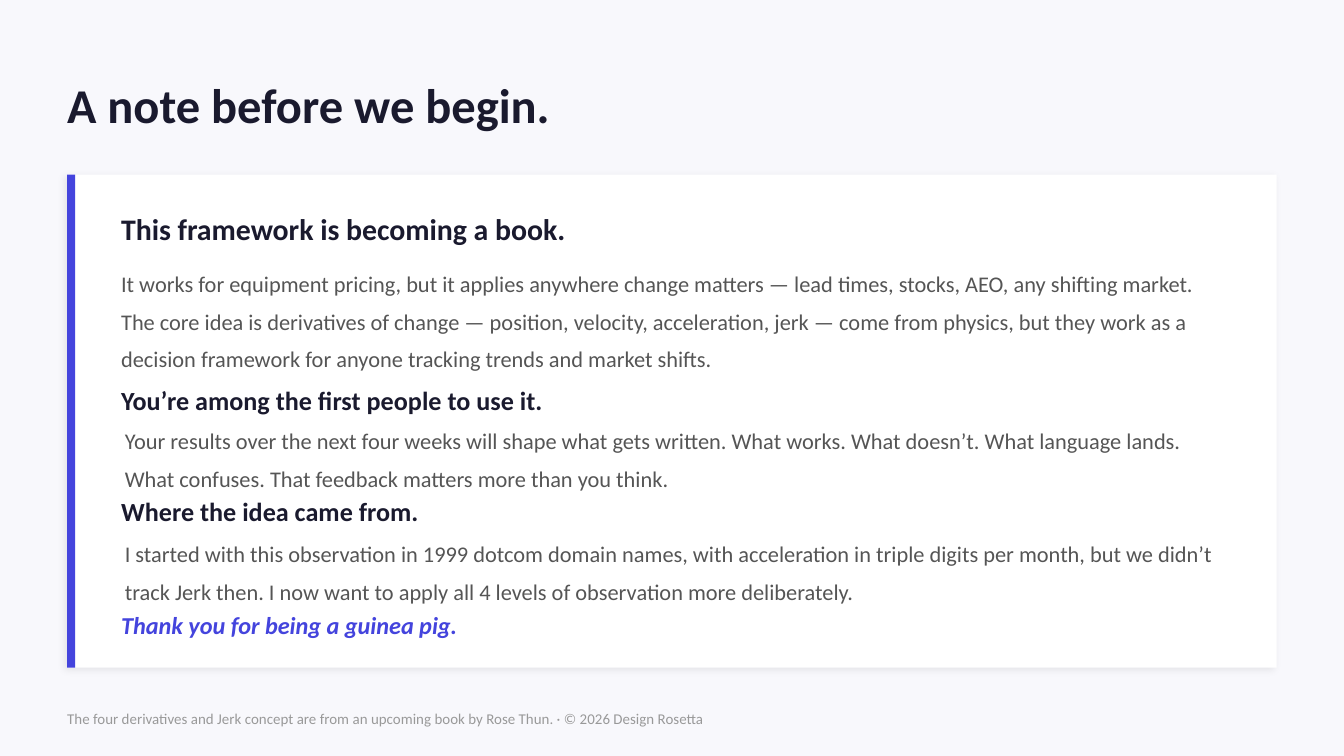
from lxml import etree
from pptx import Presentation
from pptx.dml.color import RGBColor
from pptx.enum.shapes import MSO_SHAPE
from pptx.enum.text import MSO_ANCHOR
from pptx.oxml.ns import qn
from pptx.util import Cm, Pt

RECTANGLE = MSO_SHAPE.RECTANGLE
MIDDLE = MSO_ANCHOR.MIDDLE

FONT = "Calibri"
PAPER, WHITE = "F8F8FC", "FFFFFF"
INK, GREY, PALE, ACCENT = "1A1A2E", "555555", "999999", "4444DD"

MARGIN, FULL_WIDTH = 1.27, 22.86
CARD_TOP, CARD_HEIGHT = 3.3, 9.32
TEXT_LEFT, TEXT_WIDTH = 2.29, 20.83
INDENTED_LEFT = 2.36

HEADINGS = [
    # top, height, size, text
    (3.81, 1.02, 16, "This framework is becoming a book."),
    (7.11, 0.89, 14, "You’re among the first people to use it."),
    (9.22, 0.89, 14, "Where the idea came from."),
]
PASSAGES = [
    # left, top, height, text
    (TEXT_LEFT, 5.08, 1.78,
     "It works for equipment pricing, but it applies anywhere change matters — "
     "lead times, stocks, AEO, any shifting market. The core idea is derivatives "
     "of change — position, velocity, acceleration, jerk — come from physics, but "
     "they work as a decision framework for anyone tracking trends and market shifts."),
    (INDENTED_LEFT, 7.87, 1.42,
     "Your results over the next four weeks will shape what gets written. "
     "What works. What doesn’t. What language lands. What confuses. "
     "That feedback matters more than you think."),
    (INDENTED_LEFT, 10.01, 1.42,
     "I started with this observation in 1999 dotcom domain names, with "
     "acceleration in triple digits per month, but we didn’t track Jerk then. "
     "I now want to apply all 4 levels of observation more deliberately."),
]


def color(hex_string):
    return RGBColor.from_string(hex_string)


def add_text(slide, text, left, top, width, height, *, size, fill=INK,
             bold=False, italic=False, line_spacing=None):
    box = slide.shapes.add_textbox(Cm(left), Cm(top), Cm(width), Cm(height))
    frame = box.text_frame
    frame.word_wrap = True
    frame.vertical_anchor = MIDDLE
    frame.margin_left = frame.margin_right = 0
    frame.margin_top = frame.margin_bottom = 0
    para = frame.paragraphs[0]
    if line_spacing:
        para.line_spacing = line_spacing
    span = para.add_run()
    span.text = text
    span.font.name = FONT
    span.font.size = Pt(size)
    span.font.bold = bold
    span.font.italic = italic
    span.font.color.rgb = color(fill)


def add_block(slide, left, top, width, height, fill):
    block = slide.shapes.add_shape(RECTANGLE, Cm(left), Cm(top), Cm(width), Cm(height))
    block.shadow.inherit = False
    block.fill.solid()
    block.fill.fore_color.rgb = color(fill)
    block.line.fill.background()
    return block


def add_soft_shadow(shape, blur, distance, angle, opacity):
    """Give the shape a black outer shadow; opacity is in percent."""
    effects = shape._element.spPr.find(qn("a:effectLst"))
    shadow = etree.SubElement(
        effects, qn("a:outerShdw"), blurRad=str(Pt(blur)), dist=str(Pt(distance)),
        dir=str(angle * 60000), algn="bl", rotWithShape="0")
    shade = etree.SubElement(shadow, qn("a:srgbClr"), val="000000")
    etree.SubElement(shade, qn("a:alpha"), val=str(opacity * 1000))


def add_card(slide):
    card = add_block(slide, MARGIN, CARD_TOP, FULL_WIDTH, CARD_HEIGHT, WHITE)
    add_soft_shadow(card, blur=4, distance=2, angle=135, opacity=8)
    add_block(slide, MARGIN, CARD_TOP, 0.15, CARD_HEIGHT, ACCENT)


def main():
    deck = Presentation()
    deck.slide_width, deck.slide_height = Cm(25.4), Cm(14.29)
    slide = deck.slides.add_slide(deck.slide_layouts[6])
    slide.background.fill.solid()
    slide.background.fill.fore_color.rgb = color(PAPER)

    add_text(slide, "A note before we begin.", MARGIN, 1.27, FULL_WIDTH, 1.4,
             size=26, bold=True)
    add_card(slide)
    for top, height, size, text in HEADINGS:
        add_text(slide, text, TEXT_LEFT, top, TEXT_WIDTH, height, size=size, bold=True)
    for left, top, height, text in PASSAGES:
        add_text(slide, text, left, top, TEXT_WIDTH, height,
                 size=12, fill=GREY, line_spacing=1.4)
    add_text(slide, "Thank you for being a guinea pig.", TEXT_LEFT, 11.43,
             TEXT_WIDTH, 0.76, size=13, fill=ACCENT, bold=True, italic=True)
    add_text(slide, "The four derivatives and Jerk concept are from an upcoming book "
             "by Rose Thun. · © 2026 Design Rosetta",
             MARGIN, 13.21, FULL_WIDTH, 0.76, size=8, fill=PALE)
    deck.save("out.pptx")


if __name__ == "__main__":
    main()
